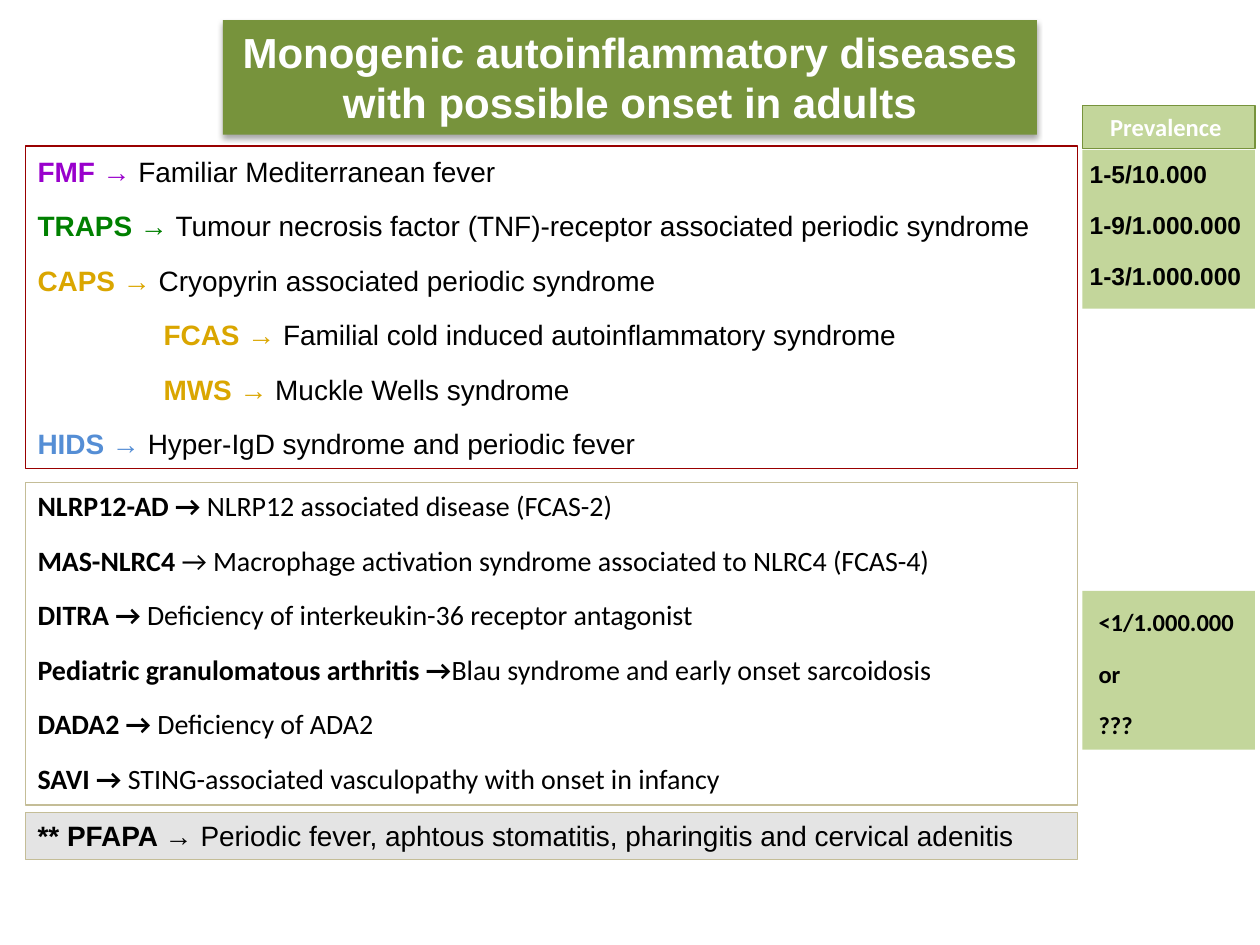
from dataclasses import dataclass
from typing import Optional

from lxml.etree import SubElement
from pptx import Presentation
from pptx.dml.color import RGBColor
from pptx.enum.shapes import MSO_SHAPE as Preset
from pptx.enum.text import MSO_ANCHOR as Anchor, PP_ALIGN as Align
from pptx.oxml.ns import qn
from pptx.util import Inches, Pt

BLACK = RGBColor(0x00, 0x00, 0x00)
WHITE = RGBColor(0xFF, 0xFF, 0xFF)
PURPLE = RGBColor(0x99, 0x00, 0xCC)
GREEN = RGBColor(0x00, 0x80, 0x00)
GOLD = RGBColor(0xDA, 0xA6, 0x00)
BLUE = RGBColor(0x55, 0x8E, 0xD5)
RED = RGBColor(0x99, 0x00, 0x00)
TAN = RGBColor(0xC4, 0xBD, 0x97)
GREY = RGBColor(0xA6, 0xA6, 0xA6)
OLIVE = RGBColor(0x77, 0x93, 0x3C)
LIME = RGBColor(0xC3, 0xD6, 0x9B)

LIST_LEFT, LIST_WIDTH, LIST_HEIGHT = 0.2, 8.35, 2.56
SIDE_LEFT, SIDE_WIDTH, SIDE_HEIGHT = 8.59, 1.37, 1.26


@dataclass(frozen=True)
class Panel:
    left: float
    top: float
    width: float
    height: float
    fill: Optional[RGBColor] = None
    line: Optional[RGBColor] = None


@dataclass(frozen=True)
class Style:
    size: float
    font: str
    color: RGBColor = BLACK
    bold: bool = True


@dataclass(frozen=True)
class Disease:
    acronym: str
    meaning: str
    color: RGBColor = BLACK
    plain_arrow: str = ""
    indent: float = 0


def draw_panel(slide, panel: Panel):
    box = slide.shapes.add_shape(
        Preset.RECTANGLE, *map(Inches, (panel.left, panel.top, panel.width, panel.height)))
    box.shadow.inherit = False
    if panel.fill is None:
        box.fill.background()
    else:
        box.fill.solid()
        box.fill.fore_color.rgb = panel.fill
    if panel.line is None:
        box.line.fill.background()
    else:
        box.line.color.rgb = panel.line
        box.line.width = Pt(0.75)
    box.text_frame.word_wrap = True
    box.text_frame.vertical_anchor = Anchor.TOP
    return box


def add_run(paragraph, text: str, style: Style) -> None:
    run = paragraph.add_run()
    run.text = text
    formats = {"size": Pt(style.size), "name": style.font, "bold": style.bold}
    for attribute, value in formats.items():
        setattr(run.font, attribute, value)
    run.font.color.rgb = style.color


def write_lines(frame, lines: list[str], style: Style, align=Align.LEFT, gap: float = 0) -> None:
    for number, line in enumerate(lines):
        paragraph = frame.add_paragraph() if number else frame.paragraphs[0]
        paragraph.alignment = align
        paragraph.space_before = Pt(gap if number else 0)
        add_run(paragraph, line, style)


def write_diseases(frame, diseases: list[Disease], font: str) -> None:
    for number, disease in enumerate(diseases):
        paragraph = frame.add_paragraph() if number else frame.paragraphs[0]
        paragraph.alignment = Align.LEFT
        paragraph.space_after = Pt(12 if len(diseases) > 1 else 0)
        if disease.indent:
            paragraph._p.get_or_add_pPr().set("marL", str(Inches(disease.indent)))
        add_run(paragraph, disease.acronym, Style(16, font, disease.color))
        if disease.plain_arrow:
            add_run(paragraph, disease.plain_arrow, Style(16, font, disease.color, False))
        add_run(paragraph, disease.meaning, Style(16, font, BLACK, False))


def add_label(slide, left: float, top: float, width: float, height: float,
              lines: list[str], style: Style, gap: float = 0) -> None:
    label = slide.shapes.add_textbox(*map(Inches, (left, top, width, height)))
    label.text_frame.word_wrap = True
    label.text_frame.margin_right = 0
    write_lines(label.text_frame, lines, style, gap=gap)


def add_alpha(color_element, percent: int) -> None:
    SubElement(color_element, qn("a:alpha")).set("val", str(percent * 1000))


def cast_shadow(box) -> None:
    effects = box._element.spPr.find(qn("a:effectLst"))
    shadow = SubElement(effects, qn("a:outerShdw"))
    settings = {"blurRad": Pt(3.1), "dist": Pt(1.8), "dir": 90 * 60000, "rotWithShape": 0}
    for attribute, value in settings.items():
        shadow.set(attribute, str(int(value)))
    color = SubElement(shadow, qn("a:srgbClr"))
    color.set("val", str(BLACK))
    add_alpha(color, 35)


COMMON = [
    Disease("FMF ", "Familiar Mediterranean fever", PURPLE, "→ "),
    Disease("TRAPS → ", "Tumour necrosis factor (TNF)-receptor associated periodic syndrome", GREEN),
    Disease("CAPS → ", "Cryopyrin associated periodic syndrome", GOLD),
    Disease("FCAS → ", "Familial cold induced autoinflammatory syndrome", GOLD, indent=1),
    Disease("MWS →", " Muckle Wells syndrome", GOLD, indent=1),
    Disease("HIDS → ", "Hyper-IgD syndrome and periodic fever", BLUE),
]
RARE = [
    Disease("NLRP12-AD → ", "NLRP12 associated disease (FCAS-2)"),
    Disease("MAS-NLRC4 ", "Macrophage activation syndrome associated to NLRC4 (FCAS-4)", plain_arrow="→ "),
    Disease("DITRA → ", "Deficiency of interkeukin-36 receptor antagonist"),
    Disease("Pediatric granulomatous arthritis →", "Blau syndrome and early onset sarcoidosis"),
    Disease("DADA2 → ", "Deficiency of ADA2"),
    Disease("SAVI → ", "STING-associated vasculopathy with onset in infancy"),
]
PFAPA = [Disease("** PFAPA → ", "Periodic fever, aphtous stomatitis, pharingitis and cervical adenitis")]
PREVALENCES = {1.21: "1-5/10.000", 1.62: "1-9/1.000.000", 2.02: "1-3/1.000.000"}


def main() -> None:
    deck = Presentation()
    deck.slide_width, deck.slide_height = Inches(10), Inches(7.5)
    slide = deck.slides.add_slide(deck.slide_layouts[6])

    common = draw_panel(slide, Panel(LIST_LEFT, 1.16, LIST_WIDTH, LIST_HEIGHT, line=RED))
    common.text_frame.vertical_anchor = Anchor.MIDDLE
    write_diseases(common.text_frame, COMMON, "Arial")

    title = draw_panel(slide, Panel(1.77, 0.16, 6.46, 0.91, fill=OLIVE))
    cast_shadow(title)
    write_lines(title.text_frame, ["Monogenic autoinflammatory diseases with possible onset in adults"],
                Style(24, "Arial", WHITE), Align.CENTER)

    pfapa = draw_panel(slide, Panel(LIST_LEFT, 6.45, LIST_WIDTH, 0.37, GREY, TAN))
    add_alpha(pfapa._element.spPr.find(qn("a:solidFill"))[0], 30)
    write_diseases(pfapa.text_frame, PFAPA, "Arial")

    rare = draw_panel(slide, Panel(LIST_LEFT, 3.83, LIST_WIDTH, LIST_HEIGHT, line=TAN))
    write_diseases(rare.text_frame, RARE, "Calibri")

    for top in (4.69, 1.19):
        draw_panel(slide, Panel(SIDE_LEFT, top, SIDE_WIDTH, SIDE_HEIGHT, LIME))
    heading = draw_panel(slide, Panel(SIDE_LEFT, 0.84, SIDE_WIDTH, 0.34, LIME, OLIVE))
    write_lines(heading.text_frame, ["Prevalence "], Style(14, "Calibri", WHITE), Align.CENTER)

    for top, prevalence in PREVALENCES.items():
        add_label(slide, 8.55, top, 1.41, 0.34, [prevalence], Style(14, "Arial"))
    add_label(slide, 8.62, 4.77, 1.41, 1.17, ["<1/1.000.000", "or", "???"],
              Style(14, "Calibri"), gap=12.6)

    deck.save("out.pptx")


if __name__ == "__main__":
    main()
